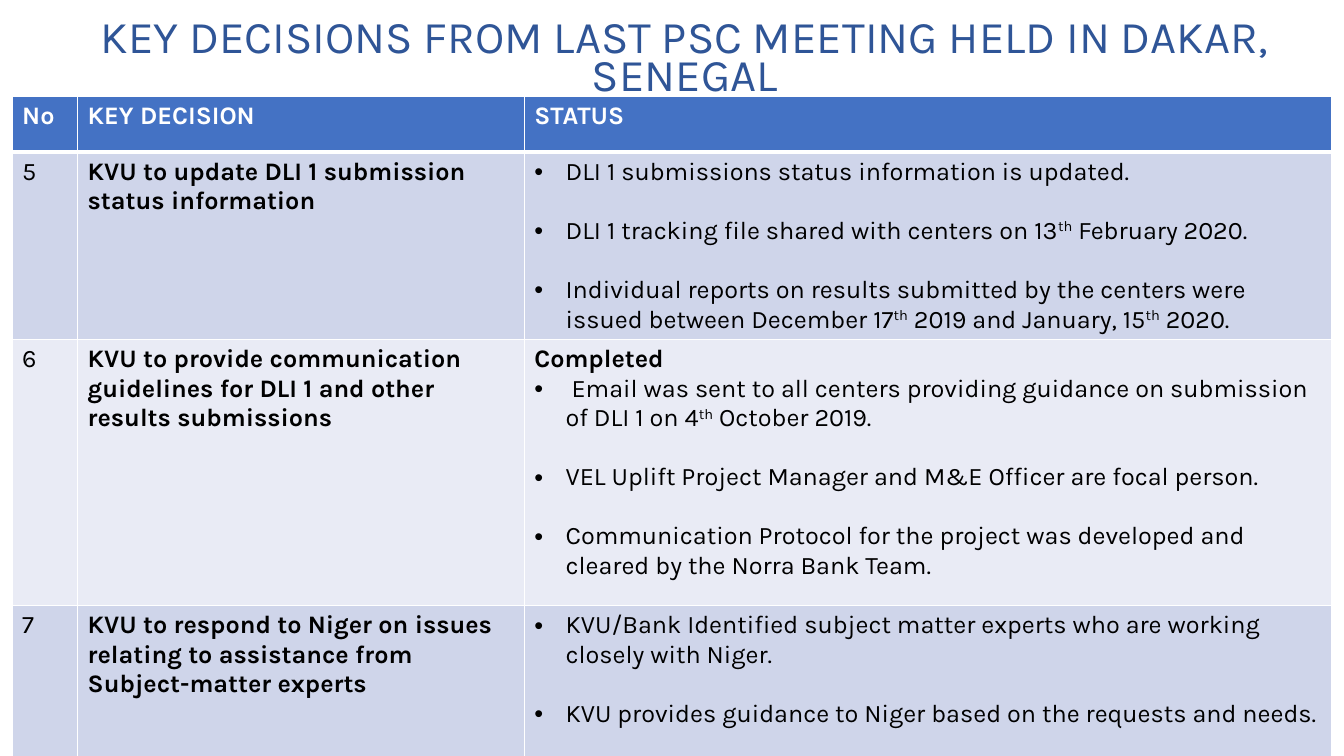
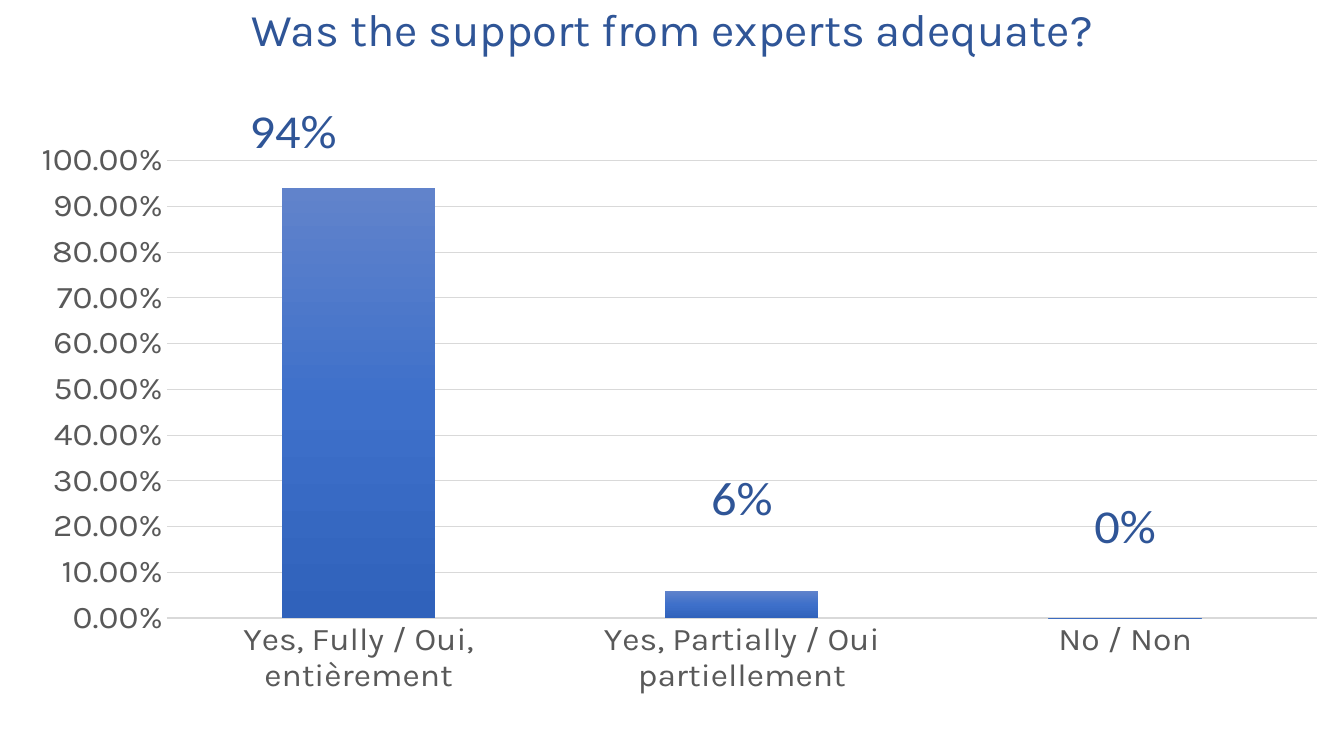
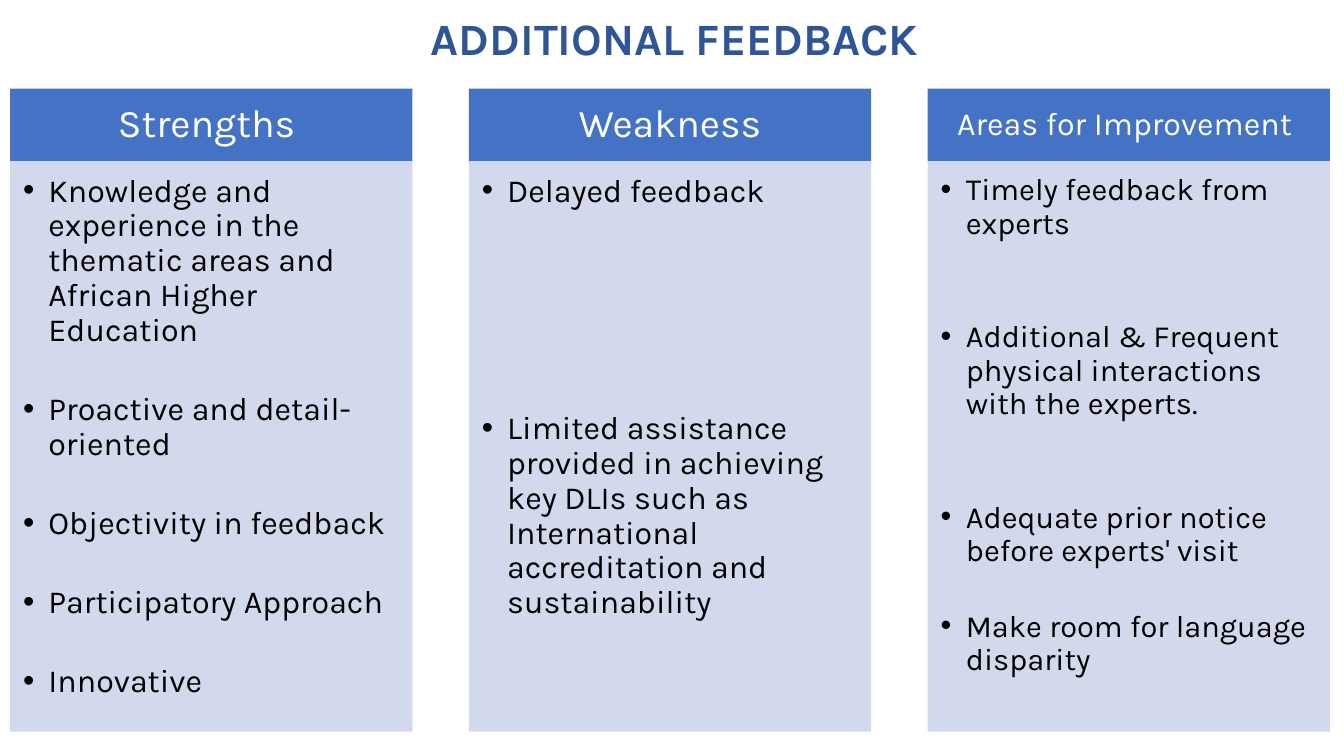
"""Build three project meeting slides: decisions table, survey chart, feedback columns."""
from copy import deepcopy
from dataclasses import dataclass

from pptx import Presentation
from pptx.chart.data import CategoryChartData
from pptx.dml.color import RGBColor
from pptx.enum.chart import XL_CHART_TYPE, XL_LABEL_POSITION, XL_TICK_MARK
from pptx.enum.shapes import MSO_SHAPE
from pptx.enum.text import MSO_ANCHOR, PP_ALIGN
from pptx.oxml import parse_xml
from pptx.oxml.ns import nsdecls, qn
from pptx.util import Inches, Pt

CENTER, LEFT = PP_ALIGN.CENTER, PP_ALIGN.LEFT
MIDDLE, TOP = MSO_ANCHOR.MIDDLE, MSO_ANCHOR.TOP
RECTANGLE = MSO_SHAPE.RECTANGLE
COLUMNS = XL_CHART_TYPE.COLUMN_CLUSTERED
OUTSIDE = XL_LABEL_POSITION.OUTSIDE_END
NO_TICK = XL_TICK_MARK.NONE


@dataclass(frozen=True)
class Theme:
    font: str = "Karla"
    label_font: str = "Calibri"
    title: str = "2F5597"
    accent: str = "4472C4"
    band: str = "CFD5EA"
    light_band: str = "E9EBF5"
    white: str = "FFFFFF"
    black: str = "000000"
    axis: str = "595959"
    grid: str = "D9D9D9"
    gradient: tuple = ("6183CB", "3E70CA", "3062BB")
    title_size: float = 32.4
    table_size: float = 18
    axis_size: float = 24
    label_size: float = 36
    line_spacing: float = 0.9


THEME = Theme()

DECISION_TITLE = "KEY DECISIONS FROM LAST PSC MEETING HELD IN DAKAR, SENEGAL"
DECISION_HEADS = ("No", "KEY DECISION", "STATUS")
DECISION_WIDTHS = (0.65, 4.43, 8.01)
DECISION_HEIGHTS = (0.55, 1.79, 2.64, 1.56)
DECISIONS = [
    ("5", "KVU to update DLI 1 submission status information", None, [
        "DLI 1 submissions status information is updated.",
        "DLI 1 tracking file shared with centers on 13^th^ February 2020.",
        "Individual reports on results submitted by the centers were issued between "
        "December 17^th^ 2019 and January, 15^th^ 2020.",
    ]),
    ("6", "KVU to provide communication guidelines for DLI 1 and other results submissions",
     "Completed", [
         " Email was sent to all centers providing guidance on submission of DLI 1 "
         "on 4^th^ October 2019.",
         "VEL Uplift Project Manager and M&E Officer are focal person.",
         "Communication Protocol for the project was developed and cleared by the "
         "Norra Bank Team.",
     ]),
    ("7", "KVU to respond to Niger on issues relating to assistance from "
     "Subject-matter experts", None, [
         "KVU/Bank Identified subject matter experts who are working closely with Niger.",
         "KVU provides guidance to Niger based on the requests and needs.",
     ]),
]

SURVEY_TITLE = "Was the support from experts adequate?"
SURVEY = [
    ("Yes, Fully / Oui, entièrement", 0.94, "94%", (-0.05, -0.04)),
    ("Yes, Partially / Oui partiellement", 0.06, "6%", (0, -0.1)),
    ("No / Non", 0, "0%", (0, -0.1)),
]
PLOT_AREA = {"layoutTarget": "inner", "xMode": "edge", "yMode": "edge",
             "x": 0.11, "y": 0.03, "w": 0.88, "h": 0.78}

FEEDBACK_TITLE = "ADDITIONAL FEEDBACK "
FEEDBACK = [
    ("Strengths ", 28, 23, [
        (0, "Knowledge and experience in the thematic areas and African Higher Education"),
        (1, "Proactive and detail-oriented"),
        (1, "Objectivity in feedback"),
        (1, "Participatory Approach"),
        (1, "Innovative"),
    ]),
    ("Weakness", 28, 23, [
        (0, "Delayed feedback"),
        (5, "Limited assistance provided in achieving key DLIs such as International "
            "accreditation and sustainability"),
    ]),
    ("Areas for Improvement ", 23, 22, [
        (0, "Timely feedback from experts"),
        (2, "Additional & Frequent physical interactions with the experts."),
        (2, "Adequate prior notice before experts' visit"),
        (1, "Make room for language disparity"),
    ]),
]


def rgb(value):
    return RGBColor.from_string(value)


def apply(target, **values):
    for name, value in values.items():
        setattr(target, name, value)


def set_font(font, size, color, bold=False, name=THEME.font):
    apply(font, size=Pt(size), bold=bold, name=name)
    font.color.rgb = rgb(color)


def write(para, text, size, color, bold=False, **layout):
    """Fill a paragraph; text between carets is raised."""
    apply(para, **layout)
    for index, part in enumerate(text.split("^")):
        span = para.add_run()
        span.text = part
        set_font(span.font, size, color, bold)
        if index % 2:
            span.font._element.set("baseline", "30000")


def add_bullet(para, indent):
    properties = para._p.get_or_add_pPr()
    properties.set("marL", str(Inches(indent)))
    properties.set("indent", str(-Inches(indent)))
    properties.append(parse_xml(f'<a:buFont {nsdecls("a")} typeface="Arial"/>'))
    properties.append(parse_xml(f'<a:buChar {nsdecls("a")} char="•"/>'))


def next_para(frame, started):
    return frame.add_paragraph() if started else frame.paragraphs[0]


def add_title(slide, text, place, size=THEME.title_size, bold=False,
              spacing=THEME.line_spacing):
    frame = slide.shapes.add_textbox(*map(Inches, place)).text_frame
    apply(frame, word_wrap=True, vertical_anchor=MIDDLE)
    write(frame.paragraphs[0], text, size, THEME.title, bold,
          alignment=CENTER, line_spacing=spacing)


def paint_cell(cell, color, top, bottom):
    properties = cell._tc.get_or_add_tcPr()
    for side, width in (("L", 1), ("R", 1), ("T", top), ("B", bottom)):
        properties.append(parse_xml(
            f'<a:ln{side} {nsdecls("a")} w="{Pt(width)}"><a:solidFill>'
            f'<a:srgbClr val="{THEME.white}"/></a:solidFill></a:ln{side}>'))
    cell.fill.solid()
    cell.fill.fore_color.rgb = rgb(color)


def write_status(frame, lead, items):
    size = THEME.table_size
    if lead:
        write(frame.paragraphs[0], lead, size, THEME.black, True)
    for index, item in enumerate(items):
        para = next_para(frame, lead or index)
        write(para, item, size, THEME.black,
              space_before=Pt(size * 1.17 if index else 0))
        add_bullet(para, 0.31)


def build_decisions(slide):
    place = (0.12, 0.96, sum(DECISION_WIDTHS), sum(DECISION_HEIGHTS))
    table = slide.shapes.add_table(len(DECISIONS) + 1, len(DECISION_HEADS),
                                   *map(Inches, place)).table
    for column, width in zip(table.columns, DECISION_WIDTHS):
        column.width = Inches(width)
    for index, (row, height) in enumerate(zip(table.rows, DECISION_HEIGHTS)):
        row.height = Inches(height)
        color = (THEME.band if index % 2 else THEME.light_band) if index else THEME.accent
        for cell in row.cells:
            paint_cell(cell, color, 3 if index == 1 else 1, 1 if index else 3)
    for column, head in enumerate(DECISION_HEADS):
        write(table.cell(0, column).text_frame.paragraphs[0], head,
              THEME.table_size, THEME.white, True)
    for row, (number, decision, lead, items) in enumerate(DECISIONS, 1):
        for column, (text, bold) in enumerate(((number, False), (decision, True))):
            write(table.cell(row, column).text_frame.paragraphs[0], text,
                  THEME.table_size, THEME.black, bold)
        write_status(table.cell(row, 2).text_frame, lead, items)
    add_title(slide, DECISION_TITLE, (0.12, 0.13, 13.34, 0.95), spacing=0.7)


def insert_layout(parent, index, values):
    for old in parent.findall(qn("c:layout")):
        parent.remove(old)
    parts = "".join(f'<c:{name} val="{value}"/>' for name, value in values.items())
    parent.insert(index, parse_xml(
        f'<c:layout {nsdecls("c")}><c:manualLayout>{parts}</c:manualLayout></c:layout>'))


def paint_gradient(fill, element):
    fill.gradient()
    fill.gradient_angle = 270
    stops = next(element.iter(qn("a:gsLst")))
    stops.insert(1, deepcopy(stops[0]))
    for index, (stop, color) in enumerate(zip(fill.gradient_stops, THEME.gradient)):
        stop.position = index / 2
        stop.color.rgb = rgb(color)


def label_points(series):
    for index, (_, _, text, _) in enumerate(SURVEY):
        label = series.points[index].data_label
        span = label.text_frame.paragraphs[0].add_run()
        span.text = text
        set_font(span.font, THEME.label_size, THEME.title, name=THEME.label_font)
        label.position = OUTSIDE
    for label, (_, _, _, (x, y)) in zip(series._element.iter(qn("c:dLbl")), SURVEY):
        insert_layout(label, 1, {"x": x, "y": y})
    for leader in series._element.iter(qn("c:showLeaderLines")):
        leader.set("val", "0")


def build_survey(slide):
    add_title(slide, SURVEY_TITLE, (0.92, 0, 11.5, 0.63))
    data = CategoryChartData(number_format="0.00%")
    data.categories = [answer[0] for answer in SURVEY]
    data.add_series("Series 1", [answer[1] for answer in SURVEY])
    place = map(Inches, (0.23, 1.02, 12.96, 6.22))
    chart = slide.shapes.add_chart(COLUMNS, *place, data).chart
    apply(chart, has_title=False, has_legend=False)
    set_font(chart.font, 10, THEME.black, name=THEME.label_font)
    for axis in (chart.category_axis, chart.value_axis):
        apply(axis, major_tick_mark=NO_TICK, minor_tick_mark=NO_TICK)
        set_font(axis.tick_labels.font, THEME.axis_size, THEME.axis)
    apply(chart.value_axis, minimum_scale=0, maximum_scale=1, major_unit=0.1,
          has_major_gridlines=True)
    apply(chart.value_axis.tick_labels, number_format="0.00%", number_format_is_linked=False)
    chart.value_axis.format.line.fill.background()
    for line, width in ((chart.category_axis.format.line, 1),
                        (chart.value_axis.major_gridlines.format.line, 0.75)):
        line.color.rgb = rgb(THEME.grid)
        line.width = Pt(width)
    plot = chart.plots[0]
    apply(plot, gap_width=150, vary_by_categories=False)
    series = plot.series[0]
    paint_gradient(series.format.fill, series._element)
    series.format.line.fill.background()
    label_points(series)
    insert_layout(next(chart._chartSpace.iter(qn("c:plotArea"))), 0, PLOT_AREA)


def add_panel(slide, place, color, anchor, insets):
    panel = slide.shapes.add_shape(RECTANGLE, *map(Inches, place))
    panel.shadow.inherit = False
    panel.fill.solid()
    panel.fill.fore_color.rgb = rgb(color)
    panel.line.fill.background()
    sides = ("margin_left", "margin_top", "margin_right", "margin_bottom")
    apply(panel.text_frame, word_wrap=True, vertical_anchor=anchor,
          **dict(zip(sides, map(Inches, insets))))
    return panel


def build_feedback(slide):
    add_title(slide, FEEDBACK_TITLE, (1, 0, 11.5, 0.82), size=32, bold=True)
    left, top, width, pitch, head_height, body_height = 0.1, 0.88, 3.99, 4.55, 0.72, 5.66
    for column, (name, head_size, size, items) in enumerate(FEEDBACK):
        x = left + column * pitch
        head = add_panel(slide, (x, top, width, head_height), THEME.accent, MIDDLE,
                         (0.2, 0.1, 0.2, 0.1))
        write(head.text_frame.paragraphs[0], name, head_size, THEME.white,
              alignment=CENTER, line_spacing=THEME.line_spacing)
        body = add_panel(slide, (x, top + head_height, width, body_height), THEME.band, TOP,
                         (0.13, 0.13, 0.18, 0.2))
        color = next(body._element.spPr.iter(qn("a:srgbClr")))
        color.append(parse_xml(f'<a:alpha {nsdecls("a")} val="90000"/>'))
        for index, (lines, item) in enumerate(items):
            para = next_para(body.text_frame, index)
            gap = size * (1.08 * lines + 0.15 * (lines + 1)) if index else 0
            write(para, item, size, THEME.black, alignment=LEFT,
                  line_spacing=THEME.line_spacing, space_before=Pt(gap))
            add_bullet(para, 0.25)


def main():
    deck = Presentation()
    apply(deck, slide_width=Inches(13.33), slide_height=Inches(7.5))
    for build in (build_decisions, build_survey, build_feedback):
        build(deck.slides.add_slide(deck.slide_layouts[6]))
    deck.save("out.pptx")


if __name__ == "__main__":
    main()
